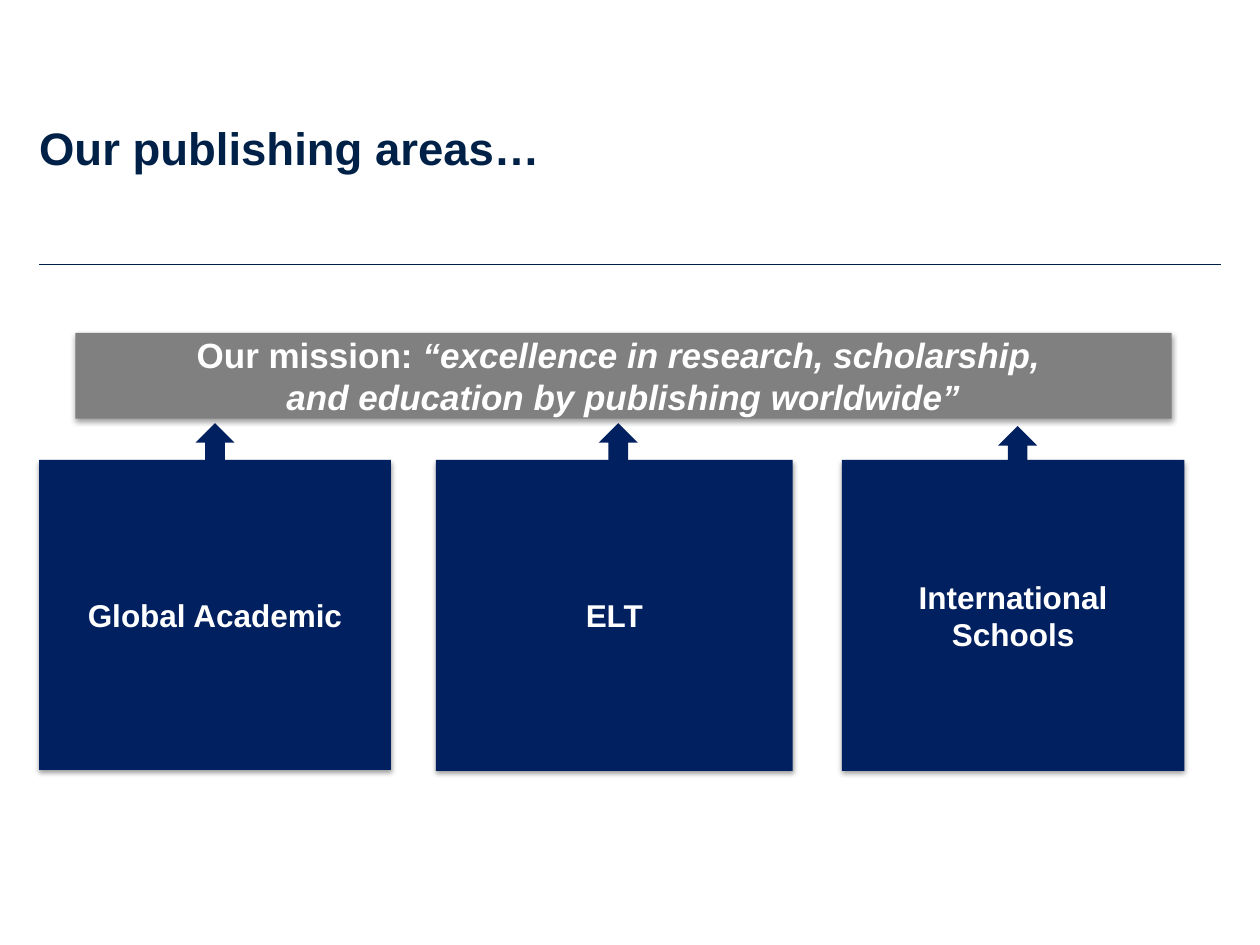
from lxml import etree
from pptx import Presentation
from pptx.dml.color import RGBColor
from pptx.enum.shapes import MSO_CONNECTOR, MSO_SHAPE
from pptx.enum.text import MSO_ANCHOR, PP_ALIGN
from pptx.oxml.ns import qn
from pptx.util import Cm, Pt

RECT, UP_ARROW = MSO_SHAPE.RECTANGLE, MSO_SHAPE.UP_ARROW
STRAIGHT = MSO_CONNECTOR.STRAIGHT
MIDDLE, BOTTOM = MSO_ANCHOR.MIDDLE, MSO_ANCHOR.BOTTOM
LEFT, CENTER = PP_ALIGN.LEFT, PP_ALIGN.CENTER

# Content: paragraphs are lists of (text, italic) runs
TITLE = [[("Our publishing areas…", False)]]
MISSION = [
    [("Our mission: ", False), ("“excellence in research, scholarship, ", True)],
    [("and education by publishing worldwide”", True)],
]
# (name, box left, width, height, arrow left, arrow top) in cm
AREAS = [
    ("Global Academic", 0.79, 7.09, 6.25, 3.94, 8.53),
    ("ELT", 8.79, 7.19, 6.27, 12.07, 8.53),
    ("International Schools", 16.97, 6.91, 6.27, 20.12, 8.59),
]
MARGIN, RULE_RIGHT, RULE_Y = 0.79, 24.61, 5.33
BOX_TOP = 9.27
ARROW_W, ARROW_H = 0.79, 0.81

THEME = {
    "font": "Arial",
    "title": RGBColor(0x00, 0x21, 0x47),
    "area": RGBColor(0x00, 0x20, 0x60),
    "mission": RGBColor(0x80, 0x80, 0x80),
    "light": RGBColor(0xFF, 0xFF, 0xFF),
    "title_size": 26,
    "mission_size": 20,
    "area_size": 18,
}


def write(tf, paragraphs, size, color, align, anchor):
    tf.word_wrap = True
    tf.vertical_anchor = anchor
    for i, runs in enumerate(paragraphs):
        p = tf.paragraphs[0] if i == 0 else tf.add_paragraph()
        p.alignment = align
        for text, italic in runs:
            r = p.add_run()
            r.text = text
            r.font.name = THEME["font"]
            r.font.size = Pt(size)
            r.font.bold = True
            r.font.italic = italic
            r.font.color.rgb = color


def add_filled(s, kind, box, color):
    sp = s.shapes.add_shape(kind, *map(Cm, box))
    sp.fill.solid()
    sp.fill.fore_color.rgb = color
    sp.line.fill.background()
    sp.shadow.inherit = False
    return sp


def add_shadow(sp):
    effects = sp._element.spPr.find(qn("a:effectLst"))
    shadow = etree.SubElement(
        effects, qn("a:outerShdw"), blurRad=str(Pt(3.1)), dist=str(Pt(1.6)),
        dir="5400000", rotWithShape="0")
    color = etree.SubElement(shadow, qn("a:srgbClr"), val="000000")
    etree.SubElement(color, qn("a:alpha"), val="38000")


def add_panel(s, box, color, paragraphs, size):
    sp = add_filled(s, RECT, box, color)
    add_shadow(sp)
    write(sp.text_frame, paragraphs, size, THEME["light"], CENTER, MIDDLE)


def main():
    prs = Presentation()
    prs.slide_width, prs.slide_height = Cm(25.4), Cm(19.05)
    s = prs.slides.add_slide(prs.slide_layouts[6])

    # Title and rule
    rule = s.shapes.add_connector(
        STRAIGHT, Cm(MARGIN), Cm(RULE_Y), Cm(RULE_RIGHT), Cm(RULE_Y))
    rule.line.color.rgb = THEME["title"]
    rule.line.width = Pt(0.6)
    etree.SubElement(rule._element.spPr, qn("a:effectLst"))
    tf = s.shapes.add_textbox(Cm(MARGIN), 0, Cm(19.28), Cm(3.53)).text_frame
    tf.margin_left = tf.margin_right = tf.margin_bottom = 0
    tf.margin_top = Cm(0.13)
    write(tf, TITLE, THEME["title_size"], THEME["title"], LEFT, BOTTOM)

    # Publishing areas, each with an arrow up to the mission
    for name, left, width, height, arrow_left, arrow_top in AREAS:
        add_panel(s, (left, BOX_TOP, width, height), THEME["area"],
                  [[(name, False)]], THEME["area_size"])
        add_filled(s, UP_ARROW, (arrow_left, arrow_top, ARROW_W, ARROW_H),
                   THEME["area"])

    # Mission banner
    add_panel(s, (1.52, 6.71, 22.1, 1.73), THEME["mission"], MISSION,
              THEME["mission_size"])

    prs.save("out.pptx")


if __name__ == "__main__":
    main()
